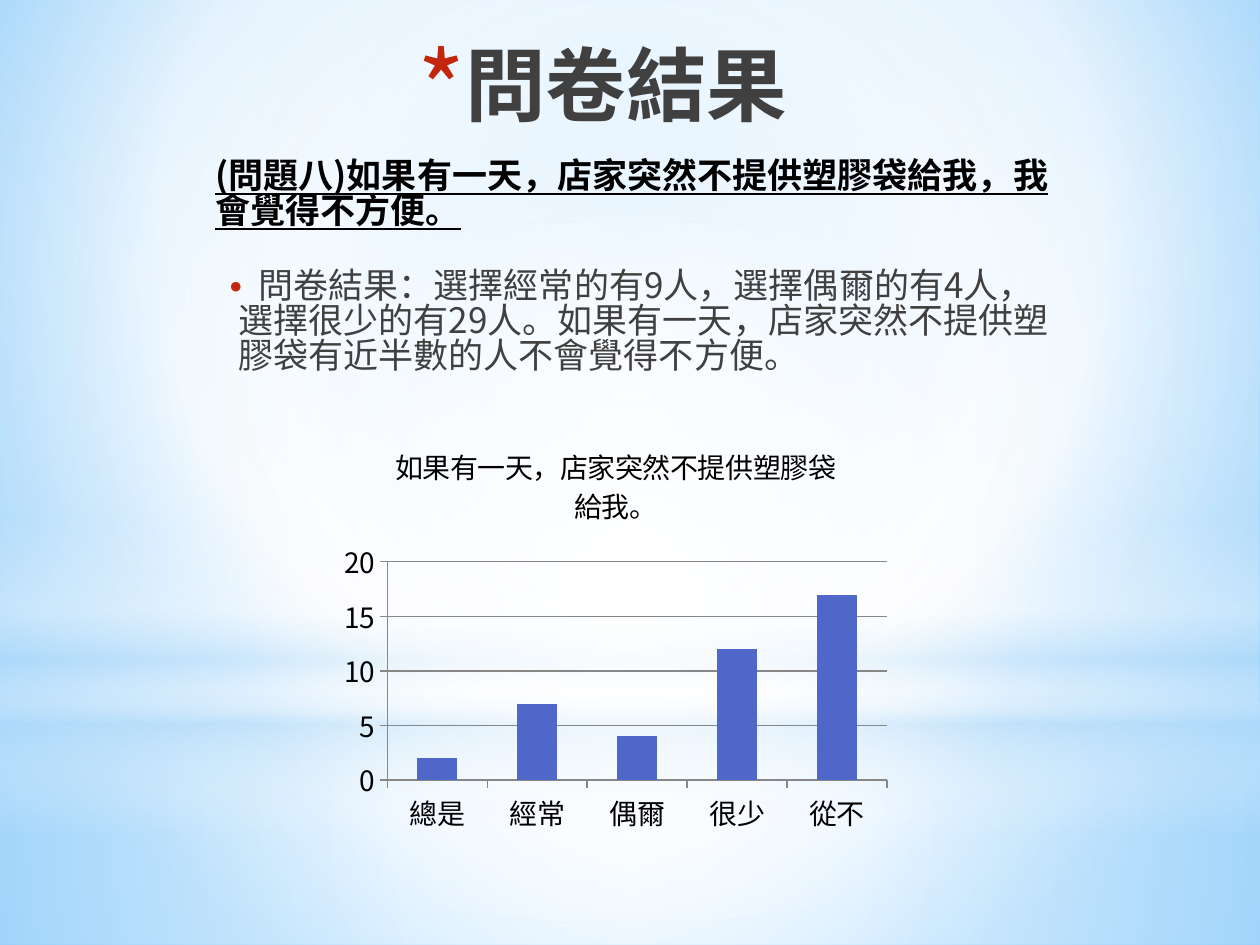
from dataclasses import dataclass

from lxml import etree
from pptx import Presentation
from pptx import util as u
from pptx.chart import data as cd
from pptx.dml.color import RGBColor
from pptx.enum import chart as ch, shapes, text
from pptx.oxml import ns


@dataclass(frozen=True)
class Theme:
    font: str = "Noto Sans CJK SC"
    chart_font: str = "Cabin"
    ink: str = "000000"
    grey: str = "404040"
    navy: str = "212745"
    accent: str = "C3260C"
    bar: str = "4E67C8"
    grid: str = "878787"
    white: str = "FFFFFF"
    mist: str = "B4DCFA"
    sky: str = "9ED5FF"
    deep: str = "5BB9FF"
    title_size: int = 46
    text_size: int = 20
    chart_size: int = 16
    line_spacing: float = 0.83


T = Theme()
CENTRE = (50, 50, 50, 50)


def sub(parent, tag, **attrs):
    e = etree.SubElement(parent, ns.qn(tag))
    for k, v in attrs.items():
        e.set(k, str(v))
    return e


def gradient(stops, focus=None, angle=90):
    g = etree.Element(ns.qn("a:gradFill"), rotWithShape="1")
    lst = sub(g, "a:gsLst")
    for pos, color, *alpha in stops:
        clr = sub(sub(lst, "a:gs", pos=pos * 1000), "a:srgbClr", val=color)
        if alpha:
            sub(clr, "a:alpha", val=alpha[0] * 1000)
    if focus:
        path = sub(g, "a:path", path="circle")
        sub(path, "a:fillToRect", **{k: v * 1000 for k, v in zip("ltrb", focus)})
    else:
        sub(g, "a:lin", ang=angle * 60000, scaled=0)
    return g


def set_gradient(fill, owner, stops, **kw):
    fill.solid()
    solid = owner.find(ns.qn("a:solidFill"))
    owner.replace(solid, gradient(stops, **kw))


def cm(*box):
    return [u.Cm(v) for v in box]


def move(sp, box):
    sp.left, sp.top, sp.width, sp.height = cm(*box)


def set_font(font, size, name=T.font, color=T.ink, bold=False, underline=False):
    font.name, font.size = name, u.Pt(size)
    font.bold, font.underline = bold, underline
    font.color.rgb = RGBColor.from_string(color)


def write(sp, words, align=text.PP_ALIGN.LEFT, **fmt):
    tf = sp.text_frame
    tf.word_wrap = True
    tf.auto_size = text.MSO_AUTO_SIZE.NONE
    tf.vertical_anchor = text.MSO_ANCHOR.TOP
    p = tf.paragraphs[0]
    p.alignment, p.line_spacing = align, T.line_spacing
    r = p.add_run()
    r.text = words
    set_font(r.font, **fmt)
    sub(r.font._element, "a:ea", typeface=r.font.name)
    return p


def set_bullet(p, char, percent, indent, hanging):
    pr = p._p.get_or_add_pPr()
    pr.set("marL", str(u.Cm(indent)))
    pr.set("indent", str(-u.Cm(hanging)))
    sub(sub(pr, "a:buClr"), "a:srgbClr", val=T.accent)
    sub(pr, "a:buSzPct", val=percent * 1000)
    sub(pr, "a:buFont", typeface=T.font)
    sub(pr, "a:buChar", char=char)


def add_backdrop(s, box):
    x, y, w, h = box
    set_gradient(s.background.fill, s._element.find(".//" + ns.qn("p:bgPr")),
                 [(0, T.sky), (60, T.white), (100, T.deep)], focus=(20, 10, 20, 60))
    rect, oval = shapes.MSO_SHAPE.RECTANGLE, shapes.MSO_SHAPE.OVAL
    split = 14.17
    layers = [
        (rect, split, h - split, CENTRE,
         [(0, T.white, 91), (37, T.white, 76), (100, T.mist, 79)]),
        (rect, 0, split, CENTRE,
         [(0, T.white, 89), (48, T.white, 62), (100, T.mist, 79)]),
        (rect, 10.46, h / 3, None,
         [(0, T.white, 0), (29, T.white, 30), (45, T.mist, 40),
          (55, T.white, 26), (65, T.mist, 60), (100, T.white, 0)]),
        (oval, 4.45, split, CENTRE, [(0, T.white), (56, T.white, 0)]),
    ]
    for kind, top, height, focus, stops in layers:
        sp = s.shapes.add_shape(kind, *cm(x, y + top, w, height))
        sp.shadow.inherit = False
        sp.line.fill.background()
        set_gradient(sp.fill, sp._element.spPr, stops, focus=focus)


def add_title(s, box, words):
    sp = s.shapes.title
    s.shapes._spTree.append(sp._element)
    move(sp, box)
    p = write(sp, words, align=text.PP_ALIGN.CENTER, size=T.title_size, bold=True)
    font = p.runs[0].font
    set_gradient(font.fill, font._element,
                 [(0, T.ink), (40, T.grey), (100, T.navy, 65)])
    set_bullet(p, "*", 128, 0.89, 0.89)


def add_body(s, box, words):
    sp = s.placeholders[1]
    s.shapes._spTree.append(sp._element)
    move(sp, box)
    p = write(sp, words, size=T.text_size, color=T.grey)
    p.space_after = u.Pt(3)
    set_bullet(p, "•", 130, 0.64, 0.51)


def add_question(s, box, words):
    sp = s.shapes.add_textbox(*cm(*box))
    write(sp, words, size=T.text_size, bold=True, underline=True)


def add_answers(s, box, name, answers):
    data = cd.CategoryChartData()
    data.categories = list(answers)
    data.add_series(name, answers.values())
    chart = s.shapes.add_chart(ch.XL_CHART_TYPE.COLUMN_CLUSTERED, *cm(*box), data).chart
    set_font(chart.font, 10, T.chart_font)
    chart.has_legend = False
    chart.has_title = True
    tf = chart.chart_title.text_frame
    tf.text = name
    set_font(tf.paragraphs[0].runs[0].font, T.chart_size)
    chart.chart_title.include_in_layout = False
    for axis in (chart.category_axis, chart.value_axis):
        set_font(axis.tick_labels.font, T.chart_size)
        axis.major_tick_mark = ch.XL_TICK_MARK.OUTSIDE
        axis.format.line.color.rgb = RGBColor.from_string(T.grid)
    lines = chart.value_axis.major_gridlines.format.line
    lines.color.rgb = RGBColor.from_string(T.grid)
    plot = chart.plots[0]
    plot.gap_width, plot.vary_by_categories = 150, False
    fill = plot.series[0].format.fill
    fill.solid()
    fill.fore_color.rgb = RGBColor.from_string(T.bar)


def main():
    prs = Presentation()
    prs.slide_width, prs.slide_height = cm(25.4, 19.05)
    s = prs.slides.add_slide(prs.slide_layouts[1])
    add_backdrop(s, (0, 0, 25.4, 19.05))
    add_title(s, (3.1, 0.91, 18.08, 3.18), "問卷結果")
    add_body(s, (3.91, 5.33, 17.78, 13.21),
             "問卷結果：選擇經常的有9人，選擇偶爾的有4人，選擇很少的有29人。"
             "如果有一天，店家突然不提供塑膠袋有近半數的人不會覺得不方便。")
    add_question(s, (4.09, 3.12, 17.4, 1.96),
                 "(問題八)如果有一天，店家突然不提供塑膠袋給我，我會覺得不方便。")
    add_answers(s, (6.71, 8.53, 11.4, 8.41), "如果有一天，店家突然不提供塑膠袋給我。",
                {"總是": 2, "經常": 7, "偶爾": 4, "很少": 12, "從不": 17})
    prs.save("out.pptx")


if __name__ == "__main__":
    main()
